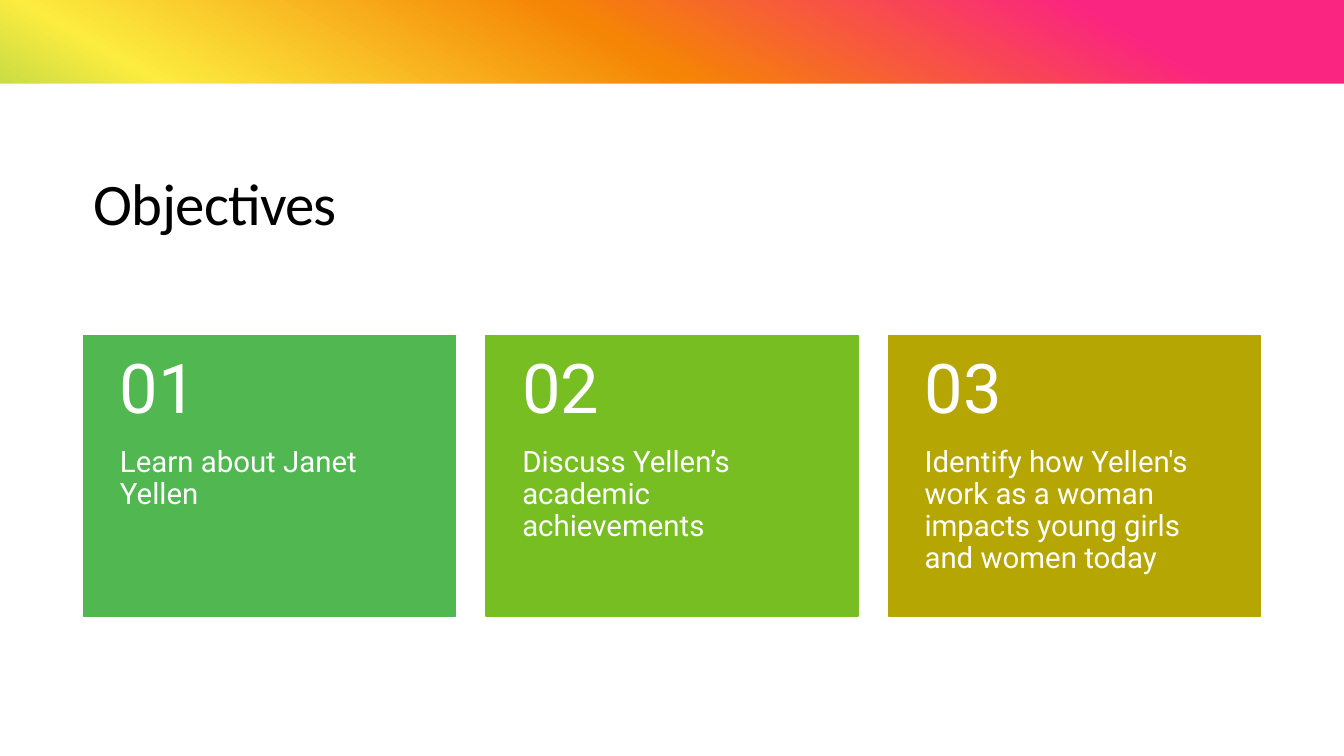
from dataclasses import dataclass

from lxml import etree
from pptx import Presentation
from pptx.dml.color import RGBColor
from pptx.enum.shapes import MSO_SHAPE
from pptx.enum.text import MSO_ANCHOR, MSO_AUTO_SIZE, PP_ALIGN
from pptx.oxml.ns import qn
from pptx.shapes.autoshape import Shape
from pptx.shapes.shapetree import GroupShapes, SlideShapes
from pptx.text.text import TextFrame
from pptx.util import Inches, Pt

RECT = MSO_SHAPE.RECTANGLE
TOP, MIDDLE = MSO_ANCHOR.TOP, MSO_ANCHOR.MIDDLE
NO_FIT = MSO_AUTO_SIZE.NONE
LEFT = PP_ALIGN.LEFT

BLACK = RGBColor(0x00, 0x00, 0x00)
WHITE = RGBColor(0xFF, 0xFF, 0xFF)
PINK = RGBColor(0xFA, 0x24, 0x81)
ORANGE = RGBColor(0xF5, 0x85, 0x05)
YELLOW = RGBColor(0xFC, 0xEC, 0x3F)
GREEN = RGBColor(0x51, 0xB8, 0x51)
TEAL = RGBColor(0x42, 0xB3, 0xBD)
LIME = RGBColor(0x77, 0xBE, 0x22)
OLIVE = RGBColor(0xB5, 0xA6, 0x03)

WIDE, HIGH = 13.33, 7.5
BAND = 0.83
MARGIN = 0.83
CARD_TOP, CARD_WIDE, CARD_HIGH = 3.33, 3.69, 2.78
HEAD_HIGH = 1.11
STEP = 3.99
PAD = 0.36


@dataclass
class Box:
    left: float
    top: float
    width: float
    height: float

    def place(self) -> tuple[int, int, int, int]:
        return (Inches(self.left), Inches(self.top),
                Inches(self.width), Inches(self.height))


@dataclass
class Card:
    number: str
    text: str
    color: RGBColor


CARDS = [
    Card("01", "Learn about Janet Yellen", GREEN),
    Card("02", "Discuss Yellen’s academic achievements", LIME),
    Card("03", "Identify how Yellen's work as a woman impacts young girls "
               "and women today", OLIVE),
]


def add_rect(shapes: SlideShapes | GroupShapes, box: Box,
             color: RGBColor) -> Shape:
    rect = shapes.add_shape(RECT, *box.place())
    rect.shadow.inherit = False
    rect.fill.solid()
    rect.fill.fore_color.rgb = color
    rect.line.fill.background()
    return rect


def blend(rect: Shape, colors: list[RGBColor]) -> None:
    """Fill with a gradient whose stops lie at 10, 30, 50... percent."""
    rect.fill.gradient()
    rect.fill.gradient_angle = 240
    stops = rect.element.spPr.find(qn("a:gradFill")).find(qn("a:gsLst"))
    for old in list(stops):
        stops.remove(old)
    for i, color in enumerate(colors):
        stop = etree.SubElement(stops, qn("a:gs"), pos=str(10000 + 20000 * i))
        etree.SubElement(stop, qn("a:srgbClr"), val=str(color))


def write(frame: TextFrame, text: str, font: str, size: float,
          color: RGBColor, spacing: float, anchor: MSO_ANCHOR) -> None:
    frame.word_wrap = True
    frame.auto_size = NO_FIT
    frame.vertical_anchor = anchor
    para = frame.paragraphs[0]
    para.alignment = LEFT
    para.line_spacing = spacing
    run = para.add_run()
    run.text = text
    run.font.name = font
    run.font.size = Pt(size)
    run.font.color.rgb = color


def add_label(shapes: GroupShapes, box: Box, text: str, size: float,
              anchor: MSO_ANCHOR, above: float, below: float) -> None:
    frame = shapes.add_textbox(*box.place()).text_frame
    frame.margin_left = frame.margin_right = Inches(PAD)
    frame.margin_top, frame.margin_bottom = Inches(above), Inches(below)
    write(frame, text, "Roboto", size, WHITE, 0.9, anchor)


def add_card(shapes: SlideShapes, card: Card, left: float) -> None:
    group = shapes.add_group_shape().shapes
    panel = add_rect(group, Box(left, CARD_TOP, CARD_WIDE, CARD_HIGH),
                     card.color)
    panel.line.color.rgb = card.color
    panel.line.width = Pt(1)
    body = Box(left, CARD_TOP + HEAD_HIGH, CARD_WIDE, CARD_HIGH - HEAD_HIGH)
    add_label(group, body, card.text, 21, TOP, 0, PAD)
    head = Box(left, CARD_TOP, CARD_WIDE, HEAD_HIGH)
    add_label(group, head, card.number, 49, MIDDLE, PAD / 2, PAD / 2)


def add_title(shapes: SlideShapes, text: str) -> None:
    title = shapes.title
    title.left, title.top, title.width, title.height = Box(
        MARGIN, 1.66, 11.67, 1.47).place()
    write(title.text_frame, text, "Calibri", 42, BLACK, 0.95, TOP)
    run = title.text_frame.paragraphs[0].runs[0]
    run.font._element.set("spc", "-50")
    # Bring the title in front of the white panel
    title.element.getparent().append(title.element)


def main() -> None:
    deck = Presentation()
    deck.slide_width, deck.slide_height = Inches(WIDE), Inches(HIGH)
    shapes = deck.slides.add_slide(deck.slide_layouts[5]).shapes
    back = add_rect(shapes, Box(0, 0, WIDE, HIGH), WHITE)
    blend(back, [PINK, ORANGE, YELLOW, GREEN, TEAL])
    add_rect(shapes, Box(0, BAND, WIDE, HIGH - BAND), WHITE)
    add_title(shapes, "Objectives")
    for i, card in enumerate(CARDS):
        add_card(shapes, card, MARGIN + i * STEP)
    deck.save("out.pptx")


if __name__ == "__main__":
    main()
